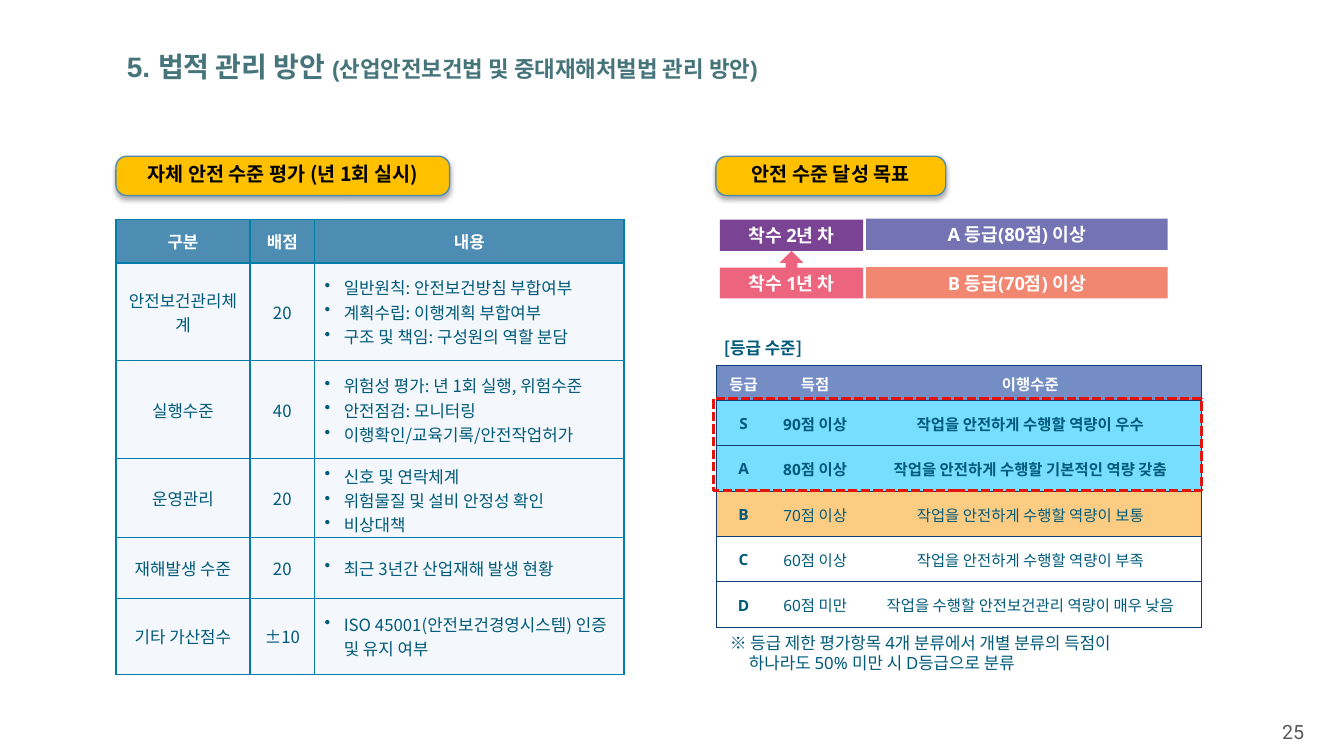
import pptx
import pptx.util
import pptx.dml.color
import pptx.enum.dml
import pptx.enum.shapes
import pptx.enum.text
import pptx.oxml
import pptx.oxml.ns
import lxml.etree

Inches, Pt = pptx.util.Inches, pptx.util.Pt
SHAPE = pptx.enum.shapes.MSO_SHAPE
ALIGN = pptx.enum.text.PP_ALIGN
MIDDLE = pptx.enum.text.MSO_ANCHOR.MIDDLE
KR, NOTO = "Noto Sans CJK KR", "Noto Sans"
TEAL, WHITE, NAVY = "005A7A", "FFFFFF", "123D74"

AUDIT = [
    ("구분", "배점", ["내용"]),
    ("안전보건관리체계", "20", ["일반원칙: 안전보건방침 부합여부", "계획수립: 이행계획 부합여부",
                        "구조 및 책임: 구성원의 역할 분담"]),
    ("실행수준", "40", ["위험성 평가: 년 1회 실행, 위험수준", "안전점검: 모니터링",
                    "이행확인/교육기록/안전작업허가"]),
    ("운영관리", "20", ["신호 및 연락체계", "위험물질 및 설비 안정성 확인", "비상대책"]),
    ("재해발생 수준", "20", ["최근 3년간 산업재해 발생 현황"]),
    ("기타 가산점수", "±10", ["ISO 45001(안전보건경영시스템) 인증 및 유지 여부"]),
]
GRADES = [
    ("등급", "득점", "이행수준", "748DC5"),
    ("S", "90점 이상", "작업을 안전하게 수행할 역량이 우수", "77DEFF"),
    ("A", "80점 이상", "작업을 안전하게 수행할 기본적인 역량 갖춤", "77DEFF"),
    ("B", "70점 이상", "작업을 안전하게 수행할 역량이 보통", "FDCC83"),
    ("C", "60점 이상", "작업을 안전하게 수행할 역량이 부족", WHITE),
    ("D", "60점 미만", "작업을 수행할 안전보건관리 역량이 매우 낮음", WHITE),
]


def color(code):
    """Turn a hex string into a colour."""
    return pptx.dml.color.RGBColor.from_string(code)


def style(para, size, face, ink, bold=False, align=ALIGN.LEFT):
    """Set the font and alignment of a paragraph."""
    para.alignment = align
    font = para.font
    font.size, font.name, font.bold = Pt(size), face, bold
    font.color.rgb = color(ink)


def indent(para, inch, mark=None):
    """Give a paragraph a hanging indent and perhaps a bullet."""
    props = para._p.get_or_add_pPr()
    props.set("marL", str(Inches(inch)))
    props.set("indent", str(-Inches(inch)))
    if mark:
        lxml.etree.SubElement(props, pptx.oxml.ns.qn("a:buChar"), char=mark)


def edges(cell, ink, width, sides):
    """Draw the named sides of a cell and clear the others."""
    props = cell._tc.get_or_add_tcPr()
    for side in "LRTB":
        fill = f'<a:solidFill><a:srgbClr val="{ink}"/></a:solidFill>' if side in sides else "<a:noFill/>"
        props.append(pptx.oxml.parse_xml(
            f'<a:ln{side} {pptx.oxml.ns.nsdecls("a")} w="{Pt(width)}">{fill}</a:ln{side}>'))


def grid(slide, left, top, cols, rows):
    """Add a plain table with the given column widths and row heights."""
    frame = slide.shapes.add_table(len(rows), len(cols), Inches(left), Inches(top),
                                   Inches(sum(cols)), Inches(sum(rows)))
    table = frame.table
    table.first_row = table.horz_banding = False
    for col, width in zip(table.columns, cols):
        col.width = Inches(width)
    for row, height in zip(table.rows, rows):
        row.height = Inches(height)
    return table


def paint(cell, fill):
    """Fill a cell and centre its text upright."""
    cell.fill.solid()
    cell.fill.fore_color.rgb = color(fill)
    cell.vertical_anchor = MIDDLE


def label(slide, box, text, size, face, ink, bold=False, align=ALIGN.LEFT):
    """Add a wrapped text box and return its paragraph."""
    frame = slide.shapes.add_textbox(*map(Inches, box)).text_frame
    frame.word_wrap = True
    para = frame.paragraphs[0]
    para.text = text
    style(para, size, face, ink, bold, align)
    return para


def block(slide, kind, box, fill, text, size, face, ink):
    """Add a filled shape with bold centred text."""
    shape = slide.shapes.add_shape(kind, *map(Inches, box))
    shape.shadow.inherit = False
    shape.fill.solid()
    shape.fill.fore_color.rgb = color(fill)
    shape.line.fill.background()
    frame = shape.text_frame
    frame.margin_top = frame.margin_bottom = 0
    frame.vertical_anchor = MIDDLE
    frame.paragraphs[0].text = text
    style(frame.paragraphs[0], size, face, ink, True, ALIGN.CENTER)
    return shape


def badge(slide, left, top, width, text):
    """Place a rounded section heading with a soft shadow."""
    shape = block(slide, SHAPE.ROUNDED_RECTANGLE, (left, top, width, 0.39),
                  "FFC000", text, 14, KR, "000000")
    shape.adjustments[0] = 0.277
    shape.line.color.rgb = color("4D8CB3")
    shape.line.width = Pt(1)
    shape.text_frame.paragraphs[0].line_spacing = Pt(13)
    shape._element.spPr.find(pptx.oxml.ns.qn("a:effectLst")).append(pptx.oxml.parse_xml(
        f'<a:outerShdw {pptx.oxml.ns.nsdecls("a")} blurRad="{Pt(3.5)}" dist="{Pt(2.2)}" '
        'dir="5400000" algn="t" rotWithShape="0">'
        '<a:srgbClr val="000000"><a:alpha val="32000"/></a:srgbClr></a:outerShdw>'))


def audit(slide, left, top):
    """Place the self-assessment heading and table."""
    badge(slide, left, top, 3.31, "자체 안전 수준 평가 (년 1회 실시)")
    table = grid(slide, left, top + 0.63, [1.33, 0.64, 3.07],
                 [0.43, 0.97, 0.97, 0.78, 0.61, 0.75])
    for r, (name, score, items) in enumerate(AUDIT):
        for c, lines in enumerate(([name], [score], items)):
            cell = table.cell(r, c)
            edges(cell, "007DA9", 1, "LRTB")
            paint(cell, "F4F7FC" if r else "4D8CB3")
            cell.text = "\n".join(lines)
            listed = r > 0 and c == 2
            for para in cell.text_frame.paragraphs:
                if listed:
                    indent(para, 0.19, "•")
                style(para, 12, KR, TEAL if r else WHITE, r == 0,
                      ALIGN.LEFT if listed else ALIGN.CENTER)


def goals(slide, left, top):
    """Place the yearly targets, the later year above the first."""
    tail = 13, NOTO, WHITE
    block(slide, SHAPE.UP_ARROW_CALLOUT, (left, top + 0.31, 1.42, 0.47), "EC647D", "착수 1년 차", *tail)
    block(slide, SHAPE.RECTANGLE, (left, top, 1.42, 0.31), "7A4394", "착수 2년 차", *tail)
    bars = [("7473B3", "A 등급(80점) 이상"), ("F18771", "B 등급(70점) 이상")]
    for i, (fill, text) in enumerate(bars):
        block(slide, SHAPE.RECTANGLE, (left + 1.45, top - 0.01 + i * 0.48, 2.99, 0.31), fill, text, *tail)


def grades(slide, left, top):
    """Place the grade table with its caption, frame and note."""
    label(slide, (left - 0.02, top - 0.32, 1.48, 0.3), "[등급 수준]", 12, KR, TEAL, True)
    table = grid(slide, left, top, [0.55, 0.87, 3.4], [0.35] + [0.45] * 5)
    for r, (*texts, fill) in enumerate(GRADES):
        for c, text in enumerate(texts):
            cell = table.cell(r, c)
            edges(cell, NAVY, 0.5, "TB" + ("L", "", "R")[c])
            paint(cell, fill)
            cell.margin_left = cell.margin_right = Inches(0.07)
            cell.margin_top = cell.margin_bottom = 0
            cell.text = text
            para = cell.text_frame.paragraphs[0]
            para.line_spacing = 1.07
            style(para, 11, NOTO, TEAL if r else WHITE, r < 3 or c == 0, ALIGN.CENTER)
    frame = slide.shapes.add_shape(SHAPE.RECTANGLE, Inches(left - 0.02), Inches(top + 0.33),
                                   Inches(4.84), Inches(0.92))
    frame.shadow.inherit = False
    frame.fill.background()
    frame.line.color.rgb = color("E3140C")
    frame.line.width = Pt(2.25)
    frame.line.dash_style = pptx.enum.dml.MSO_LINE.SQUARE_DOT
    note = label(slide, (left + 0.04, top + 2.61, 4.5, 0.5),
                 "※ 등급 제한 평가항목 4개 분류에서 개별 분류의 득점이 하나라도 50% 미만 시 D등급으로 분류",
                 12, NOTO, TEAL)
    note.line_spacing = Pt(14.4)
    indent(note, 0.19)


def title(slide, box):
    """Place the slide title with its smaller bracketed part."""
    para = label(slide, box, "", 20, "Arial", "45747A", True)
    para.line_spacing = 0.9
    for text, size in (("5. 법적 관리 방안 ", 20), ("(산업안전보건법 및 중대재해처벌법 관리 방안)", 16)):
        run = para.add_run()
        run.text = text
        run.font.size = Pt(size)
    slide.shapes[-1].text_frame.vertical_anchor = MIDDLE


def main():
    """Build and save the slide."""
    deck = pptx.Presentation()
    deck.slide_width, deck.slide_height = Inches(13.33), Inches(7.5)
    slide = deck.slides.add_slide(deck.slide_layouts[6])
    title(slide, (1.16, 0.46, 11.35, 0.44))
    audit(slide, 1.15, 1.55)
    badge(slide, 7.1, 1.55, 2.28, "안전 수준 달성 목표")
    goals(slide, 7.14, 2.18)
    grades(slide, 7.1, 3.62)
    label(slide, (12.52, 7.09, 0.61, 0.34), "25", 14, "Roboto", "595959", align=ALIGN.CENTER)
    deck.save("out.pptx")


if __name__ == "__main__":
    main()
